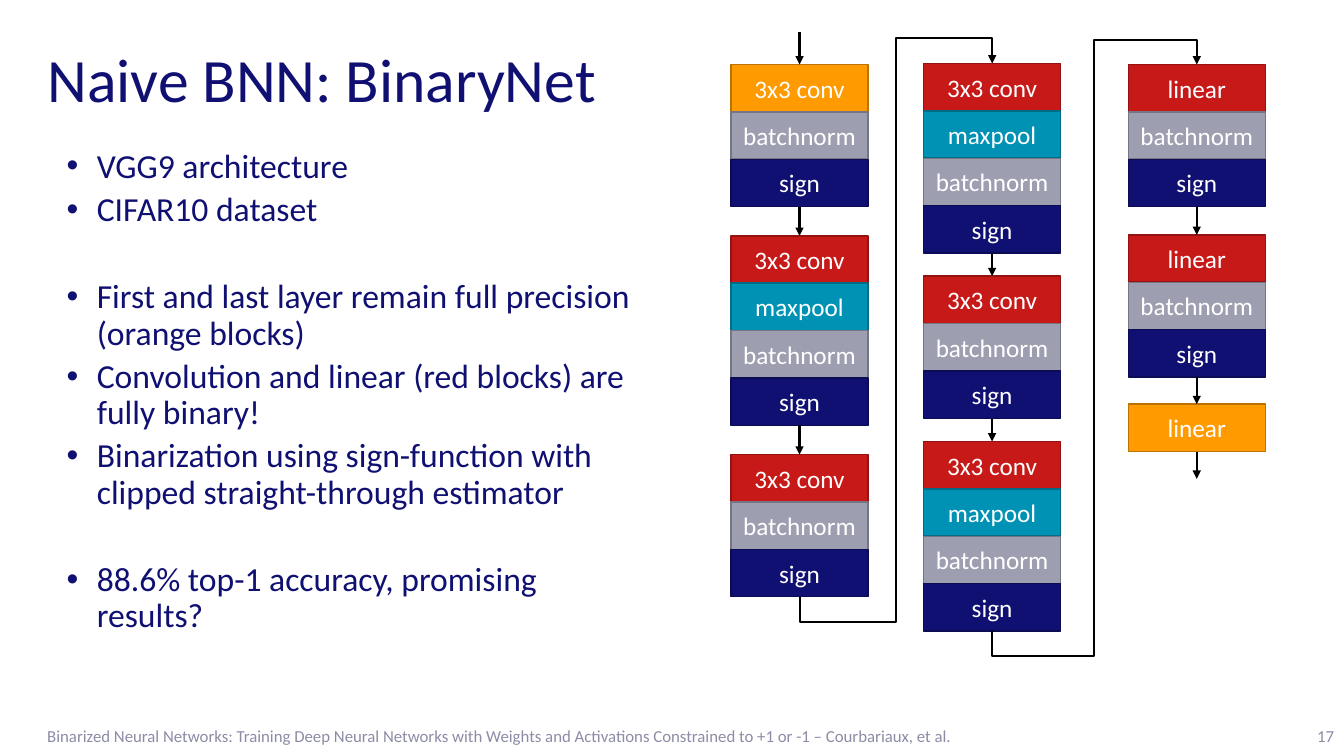
from dataclasses import dataclass

from lxml import etree
from pptx import Presentation
from pptx.dml.color import RGBColor
from pptx.enum.shapes import MSO_CONNECTOR, MSO_SHAPE
from pptx.enum.text import MSO_ANCHOR, MSO_AUTO_SIZE, PP_ALIGN
from pptx.oxml.ns import qn
from pptx.util import Inches, Pt

RECTANGLE = MSO_SHAPE.RECTANGLE
STRAIGHT, ELBOW = MSO_CONNECTOR.STRAIGHT, MSO_CONNECTOR.ELBOW
MIDDLE, TOP_ANCHOR = MSO_ANCHOR.MIDDLE, MSO_ANCHOR.TOP
LEFT, CENTER, RIGHT = PP_ALIGN.LEFT, PP_ALIGN.CENTER, PP_ALIGN.RIGHT
NO_AUTOFIT = MSO_AUTO_SIZE.NONE
TOP_SIDE, BOTTOM_SIDE = 0, 2


@dataclass(frozen=True)
class Theme:
    font: str = "Calibri"
    ink: str = "101073"
    muted: str = "8C8CA6"
    white: str = "FFFFFF"
    black: str = "000000"
    full_precision: tuple = ("FF9A00", "BD7200")
    binary: tuple = ("C81919", "941212")
    pooling: tuple = ("0092B5", "006C86")
    norm: tuple = ("9E9EB1", "757583")
    activation: tuple = ("101073", "0C0C55")
    title_size: int = 44
    body_size: int = 24
    block_size: int = 18
    footer_size: int = 12
    border_width: float = 1
    arrow_width: float = 1.5


THEME = Theme()
BLOCK_WIDTH, BLOCK_HEIGHT = 1.36, 0.47
DETOUR = 0.25

FIRST_CONV = ("3x3 conv", THEME.full_precision)
CONV = ("3x3 conv", THEME.binary)
LINEAR = ("linear", THEME.binary)
LAST_LINEAR = ("linear", THEME.full_precision)
MAXPOOL = ("maxpool", THEME.pooling)
FINISH = [("batchnorm", THEME.norm), ("sign", THEME.activation)]

COLUMNS = [
    (7.25, [
        (0.64, [FIRST_CONV, *FINISH]),
        (2.34, [CONV, MAXPOOL, *FINISH]),
        (4.51, [CONV, *FINISH]),
    ]),
    (9.16, [
        (0.63, [CONV, MAXPOOL, *FINISH]),
        (2.74, [CONV, *FINISH]),
        (4.38, [CONV, MAXPOOL, *FINISH]),
    ]),
    (11.19, [
        (0.64, [LINEAR, *FINISH]),
        (2.33, [LINEAR, *FINISH]),
        (4.01, [LAST_LINEAR]),
    ]),
]

BULLETS = [
    ("VGG9 architecture", 5),
    ("CIFAR10 dataset", 5),
    ("First and last layer remain full precision (orange blocks)", 36.5),
    ("Convolution and linear (red blocks) are fully binary!", 5),
    ("Binarization using sign-function with clipped straight-through estimator", 5),
    ("88.6% top-1 accuracy, promising results?", 36.5),
]
CITATION = (
    "Binarized Neural Networks: Training Deep Neural Networks with Weights and "
    "Activations Constrained to +1 or -1 – Courbariaux, et al."
)


def add_span(para, text, size, color):
    span = para.add_run()
    span.text = text
    span.font.name = THEME.font
    span.font.size = Pt(size)
    span.font.color.rgb = RGBColor.from_string(color)


def place(box, left, top, width, height, anchor):
    box.left, box.top = Inches(left), Inches(top)
    box.width, box.height = Inches(width), Inches(height)
    frame = box.text_frame
    frame.word_wrap = True
    frame.auto_size = NO_AUTOFIT
    frame.vertical_anchor = anchor
    return frame


def add_title(page, text):
    frame = place(page.shapes.title, 0.37, 0.4, 6.14, 0.83, MIDDLE)
    para = frame.paragraphs[0]
    para.alignment = LEFT
    para.line_spacing = 0.9
    add_span(para, text, THEME.title_size, THEME.ink)


def add_bullets(page, bullets):
    frame = place(page.placeholders[1], 0.37, 1.43, 6.14, 5.47, TOP_ANCHOR)
    for index, (text, space_before) in enumerate(bullets):
        para = frame.add_paragraph() if index else frame.paragraphs[0]
        para.line_spacing = 0.9
        para.space_before = Pt(space_before)
        properties = para._p.get_or_add_pPr()
        properties.set("marL", str(Inches(0.49)))
        properties.set("indent", str(Inches(-0.3)))
        etree.SubElement(properties, qn("a:buFont"), typeface="Arial")
        etree.SubElement(properties, qn("a:buChar"), char="•")
        add_span(para, text, THEME.body_size, THEME.ink)


def add_footer(page, text, left, width, alignment):
    box = page.shapes.add_textbox(0, 0, 0, 0)
    frame = place(box, left, 7.1, width, 0.4, MIDDLE)
    para = frame.paragraphs[0]
    para.alignment = alignment
    add_span(para, text, THEME.footer_size, THEME.muted)


def add_block(page, label, colors, left, top):
    block = page.shapes.add_shape(RECTANGLE, 0, 0, 0, 0)
    frame = place(block, left, top, BLOCK_WIDTH, BLOCK_HEIGHT, MIDDLE)
    frame.margin_left = frame.margin_right = 0
    block.shadow.inherit = False
    fill, border = colors
    block.fill.solid()
    block.fill.fore_color.rgb = RGBColor.from_string(fill)
    block.line.color.rgb = RGBColor.from_string(border)
    block.line.width = Pt(THEME.border_width)
    para = frame.paragraphs[0]
    para.alignment = CENTER
    add_span(para, label, THEME.block_size, THEME.white)
    return block


def add_stack(page, layers, left, top):
    blocks = [
        add_block(page, label, colors, left, top + row * BLOCK_HEIGHT)
        for row, (label, colors) in enumerate(layers)
    ]
    return blocks[0], blocks[-1]


def style_arrow(arrow):
    arrow.line.color.rgb = RGBColor.from_string(THEME.black)
    arrow.line.width = Pt(THEME.arrow_width)
    etree.SubElement(arrow.line._get_or_add_ln(), qn("a:tailEnd"), type="triangle")
    etree.SubElement(arrow._element.spPr, qn("a:effectLst"))


def add_arrow(page, left, start, end, source=None, target=None):
    center = Inches(left + BLOCK_WIDTH / 2)
    arrow = page.shapes.add_connector(STRAIGHT, center, Inches(start), center, Inches(end))
    if source is not None:
        arrow.begin_connect(source, BOTTOM_SIDE)
    if target is not None:
        arrow.end_connect(target, TOP_SIDE)
    style_arrow(arrow)


def add_detour(page, source, target):
    start_x, start_y = source.left + source.width // 2, source.top + source.height
    end_x, end_y = target.left + target.width // 2, target.top
    rise, run = start_y - end_y, end_x - start_x
    left, top = (start_x + end_x - rise) // 2, (start_y + end_y - run) // 2
    arrow = page.shapes.add_connector(ELBOW, left + rise, top + run, left, top)
    properties = arrow._element.spPr
    properties.find(qn("a:xfrm")).set("rot", str(90 * 60000))
    geometry = properties.find(qn("a:prstGeom"))
    geometry.set("prst", "bentConnector5")
    guides = geometry.find(qn("a:avLst"))
    overshoot = round(Inches(DETOUR) / rise * 100000)
    for number, value in enumerate((-overshoot, 50000, 100000 + overshoot), 1):
        etree.SubElement(guides, qn("a:gd"), name=f"adj{number}", fmla=f"val {value}")
    style_arrow(arrow)


def add_network(page):
    ends = []
    for left, stacks in COLUMNS:
        placed = [(top, *add_stack(page, layers, left, top)) for top, layers in stacks]
        for (_, _, source), (top, target, _) in zip(placed, placed[1:]):
            add_arrow(page, left, top, top, source, target)
        ends.append((placed[0][1], placed[-1][2]))
    add_arrow(page, COLUMNS[0][0], 0.32, 0.64, target=ends[0][0])
    add_arrow(page, COLUMNS[-1][0], 4.48, 4.75, source=ends[-1][1])
    for (_, source), (target, _) in zip(ends, ends[1:]):
        add_detour(page, source, target)


def main():
    deck = Presentation()
    deck.slide_width, deck.slide_height = Inches(13.33), Inches(7.5)
    page = deck.slides.add_slide(deck.slide_layouts[1])
    add_footer(page, CITATION, 0.37, 12.28, LEFT)
    add_footer(page, "17", 12.65, 0.68, RIGHT)
    add_bullets(page, BULLETS)
    add_title(page, "Naive BNN: BinaryNet")
    add_network(page)
    deck.save("out.pptx")


if __name__ == "__main__":
    main()
